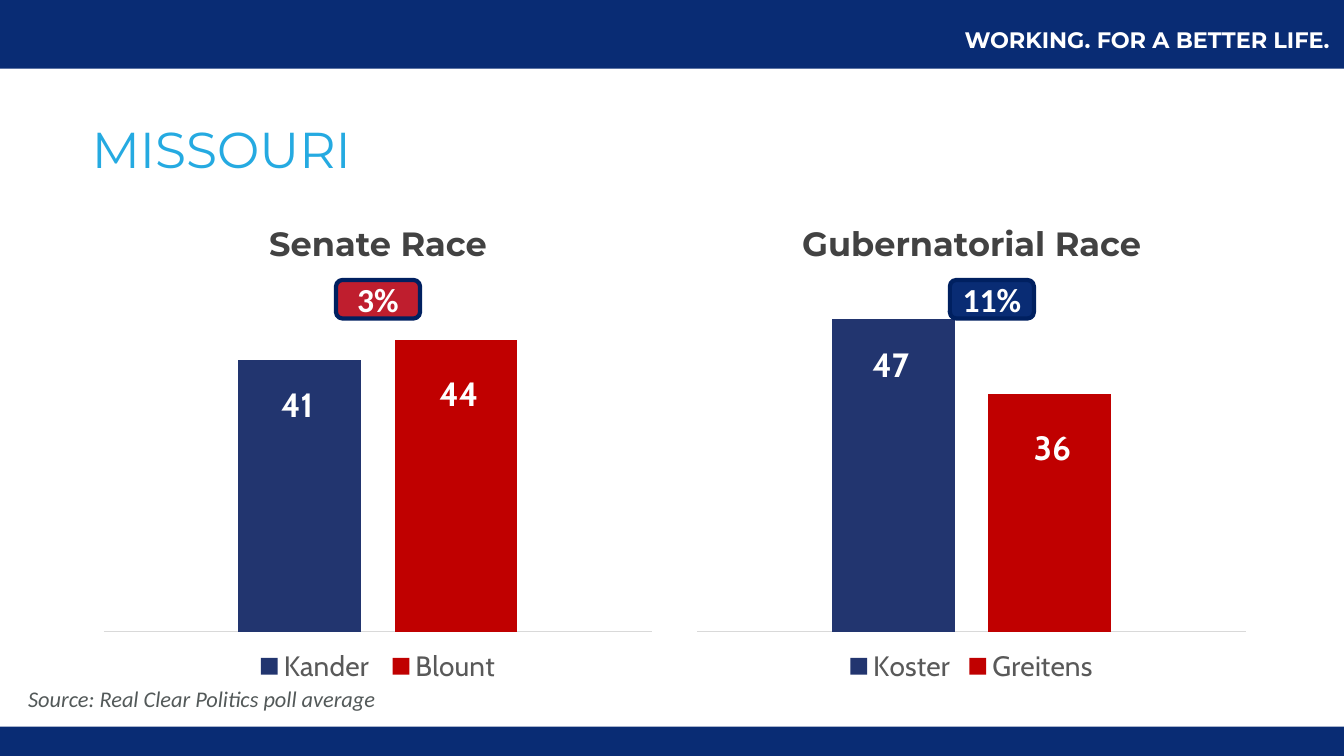
from lxml import etree
from pptx import Presentation
from pptx.chart.data import CategoryChartData
from pptx.dml.color import RGBColor
from pptx.enum.chart import XL_CHART_TYPE as Kind
from pptx.enum.chart import XL_LABEL_POSITION as Spot
from pptx.enum.chart import XL_LEGEND_POSITION as Side
from pptx.enum.chart import XL_TICK_LABEL_POSITION as Tick
from pptx.enum.chart import XL_TICK_MARK as Mark
from pptx.enum.shapes import MSO_SHAPE as Form
from pptx.enum.text import MSO_ANCHOR as Anchor
from pptx.enum.text import PP_ALIGN as Align
from pptx.oxml.ns import qn
from pptx.util import Pt

NAVY, WHITE, GREY = "092C74", "FFFFFF", "595959"
BARS = ["22356F", "C00000"]
WIDE, HIGH = 960, 540
# Label shifts for the left and right bar, as parts of the chart size
SHIFTS = [(-0.005, 0.05), (0.005, 0.07)]


def rgb(code):
    return RGBColor.from_string(code)


def style(font, name, size, color, bold=False, italic=False):
    font.name, font.size = name, Pt(size)
    font.bold, font.italic = bold, italic
    font.color.rgb = rgb(color)


def write(shape, text, name, size, color, align=Align.LEFT,
          anchor=Anchor.TOP, space=None, wrap=True, **marks):
    frame = shape.text_frame
    frame.word_wrap = wrap
    frame.vertical_anchor = anchor
    frame.text = text
    para = frame.paragraphs[0]
    para.alignment = align
    para.line_spacing = space
    style(para.runs[0].font, name, size, color, **marks)


def add_text(slide, box, text, *look, **more):
    shape = slide.shapes.add_textbox(*map(Pt, box))
    write(shape, text, *look, **more)


def add_block(slide, form, box, fill, line=None):
    shape = slide.shapes.add_shape(form, *map(Pt, box))
    shape.shadow.inherit = False
    shape.fill.solid()
    shape.fill.fore_color.rgb = rgb(fill)
    if line:
        shape.line.color.rgb = rgb(line)
        shape.line.width = Pt(3)
    else:
        shape.line.fill.background()
    return shape


def add_lead(slide, left, text, fill):
    pill = add_block(slide, Form.ROUNDED_RECTANGLE, (left, 200, 60, 27.5),
                     fill, "002060")
    write(pill, text, "Calibri", 24, WHITE, Align.CENTER, Anchor.MIDDLE,
          bold=True)


def set_layout(node, index, **parts):
    for old in node.findall(qn("c:layout")):
        node.remove(old)
    layout = etree.Element(qn("c:layout"))
    manual = etree.SubElement(layout, qn("c:manualLayout"))
    for tag, val in parts.items():
        etree.SubElement(manual, qn("c:" + tag)).set("val", str(val))
    node.insert(index, layout)


def set_label(bar, shift):
    label = bar.points[0].data_label
    style(label.font, "Cabin", 24, WHITE, bold=True)
    label.position = Spot.INSIDE_END
    node = bar._element.find(".//" + qn("c:dLbl"))
    set_layout(node, 1, x=shift[0], y=shift[1])
    # No leader lines from bar to label
    group = node.getparent()
    lines = group.find(qn("c:showLeaderLines"))
    if lines is None:
        lines = etree.SubElement(group, qn("c:showLeaderLines"))
    lines.set("val", "0")


def add_race(slide, left, votes):
    data = CategoryChartData()
    data.categories = [" "]
    for name, share in votes.items():
        data.add_series(name, [share])
    box = map(Pt, (left, 207.5, 408, 305))
    chart = slide.shapes.add_chart(Kind.COLUMN_CLUSTERED, *box, data).chart
    style(chart.font, "Cabin", 10, "000000")
    chart.has_title = False

    # Legend
    chart.has_legend = True
    chart.legend.position = Side.BOTTOM
    chart.legend.include_in_layout = False
    style(chart.legend.font, "Cabin", 20, GREY)
    root = chart._chartSpace
    set_layout(root.find(".//" + qn("c:legend")), 1, xMode="edge",
               yMode="edge", x=0.27, y=0.83, w=0.46, h=0.1)

    # Axes
    scale = chart.value_axis
    scale.minimum_scale, scale.maximum_scale = 1, 50
    scale.has_major_gridlines = False
    scale.visible = False
    base = chart.category_axis
    base.major_tick_mark = Mark.NONE
    base.tick_label_position = Tick.LOW
    style(base.tick_labels.font, "Cabin", 12, GREY)
    base.format.line.color.rgb = rgb("D9D9D9")
    base.format.line.width = Pt(0.75)

    # Bars and plot area
    plot = chart.plots[0]
    plot.vary_by_categories = False
    plot.gap_width, plot.overlap = 219, -27
    for bar, color, shift in zip(plot.series, BARS, SHIFTS):
        bar.format.fill.solid()
        bar.format.fill.fore_color.rgb = rgb(color)
        set_label(bar, shift)
    set_layout(root.find(".//" + qn("c:plotArea")), 0, layoutTarget="inner",
               xMode="edge", yMode="edge", x=0.02, y=0.02, w=0.96, h=0.78)


def main():
    deck = Presentation()
    deck.slide_width, deck.slide_height = Pt(WIDE), Pt(HIGH)
    slide = deck.slides.add_slide(deck.slide_layouts[6])

    # Bands and slogan
    add_block(slide, Form.RECTANGLE, (0, 519, WIDE, 21), NAVY)
    add_block(slide, Form.RECTANGLE, (0, 0, WIDE, 49), NAVY)
    add_text(slide, (620, 15, 399, 27), "WORKING. FOR A BETTER LIFE.",
             "Montserrat", 16, WHITE, Align.CENTER, bold=True)

    # Title
    add_text(slide, (58.5, 74, 832, 69), "MISSOURI", "Montserrat", 36,
             "25AAE1", anchor=Anchor.MIDDLE, space=0.9)

    # Races: left edge, heading, votes, lead, place and colour of the lead
    races = [
        (66, "Senate Race", {"Kander": 41, "Blount": 44},
         "3%", 240, "BF1E2E"),
        (490, "Gubernatorial Race", {"Koster": 47, "Greitens": 36},
         "11%", 678.5, NAVY),
    ]
    for left, head, votes, lead, spot, fill in races:
        add_text(slide, (left, 140, 408, 52), head, "Montserrat", 24,
                 "424242", Align.CENTER, Anchor.BOTTOM, 0.9, bold=True)
        add_race(slide, left, votes)
        add_lead(slide, spot, lead, fill)

    # Source
    add_text(slide, (13, 486, 300, 27),
             "Source: Real Clear Politics poll average",
             "Calibri", 16, "535959", italic=True)
    deck.save("out.pptx")


if __name__ == "__main__":
    main()
